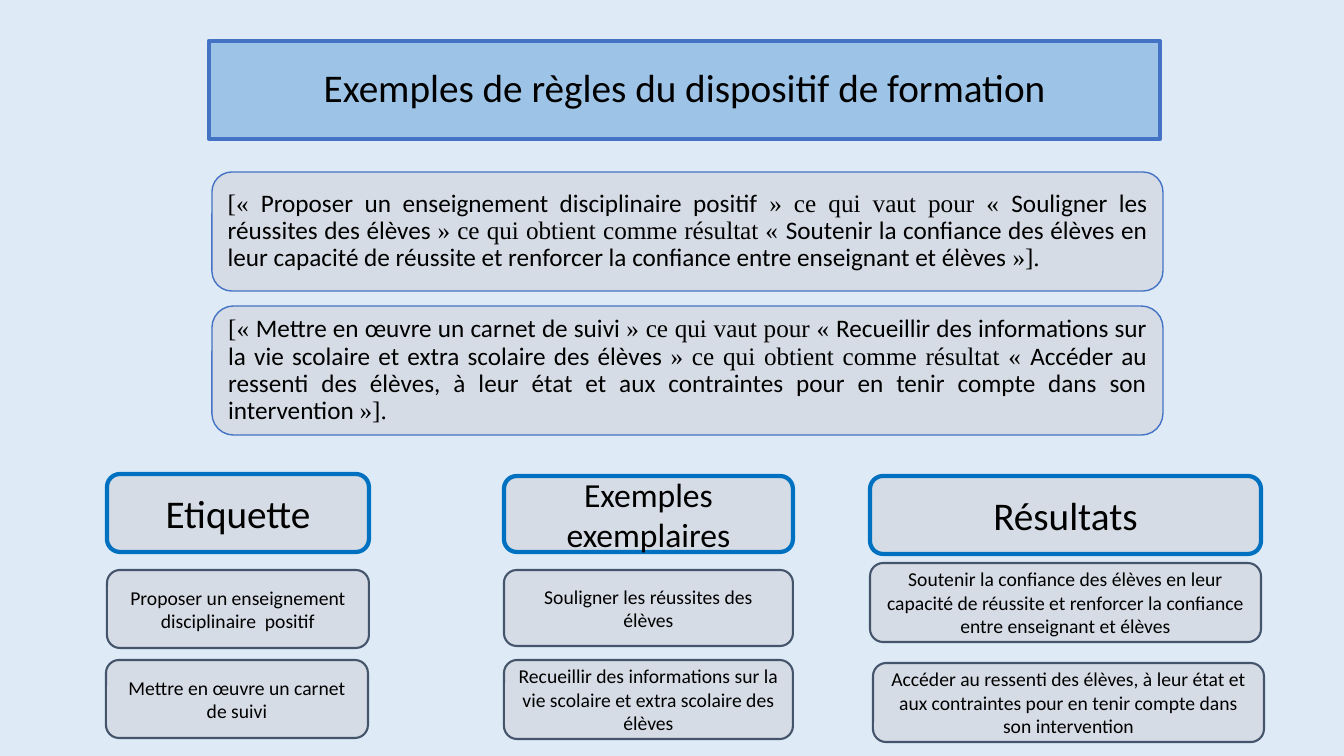
from pptx import Presentation
from pptx.dml.color import RGBColor
from pptx.enum.shapes import MSO_SHAPE
from pptx.enum.text import MSO_ANCHOR, PP_ALIGN
from pptx.util import Emu, Pt

RECT, ROUND = MSO_SHAPE.RECTANGLE, MSO_SHAPE.ROUNDED_RECTANGLE
MIDDLE = MSO_ANCHOR.MIDDLE
CENTER, JUSTIFY = PP_ALIGN.CENTER, PP_ALIGN.JUSTIFY

TITLE = "Exemples de règles du dispositif de formation"
HEADS = ["Etiquette", "Exemples exemplaires", "Résultats"]
ROWS = [
    ("Proposer un enseignement disciplinaire  positif",
     "Souligner les réussites des élèves",
     "Soutenir la confiance des élèves en leur capacité de réussite et "
     "renforcer la confiance entre enseignant et élèves"),
    ("Mettre en œuvre un carnet de suivi",
     "Recueillir des informations sur la vie scolaire et extra scolaire des élèves",
     "Accéder au ressenti des élèves, à leur état et aux contraintes "
     "pour en tenir compte dans son intervention"),
]
LINKS = ["[« ", "» ce qui vaut pour « ", "» ce qui obtient comme résultat « "]
END = "»]. "

TITLE_BOX = (209, 41, 951, 98)
RULE_BOXES = [(212, 172, 951, 119), (212, 306, 951, 129)]
HEAD_BOXES = [(107, 474, 262, 78), (504, 476, 289, 76), (870, 476, 391, 78)]
ROW_BOXES = [
    [(107, 570, 262, 78), (504, 570, 289, 76), (870, 563, 391, 79)],
    [(106, 660, 262, 78), (504, 660, 289, 79), (873, 663, 391, 79)],
]

THEME = {
    "back": "DEEBF7", "text": "000000", "sans": "Calibri", "serif": "Times New Roman",
    "title": {"form": RECT, "fill": "9DC3E6", "line": "4472C4", "width": 3,
              "size": 28, "para": {"alignment": CENTER, "line_spacing": 0.9}},
    "rule": {"form": ROUND, "fill": "D6DCE5", "line": "4472C4", "width": 1,
             "size": 18, "para": {"alignment": JUSTIFY, "line_spacing": 0.9}},
    "head": {"form": ROUND, "fill": "D6DCE5", "line": "0070C0", "width": 3,
             "size": 28, "para": {"alignment": CENTER}},
    "item": {"form": ROUND, "fill": "D6DCE5", "line": "44546A", "width": 1.5,
             "size": 14, "para": {"alignment": CENTER}},
}
THEME["long"] = {**THEME["head"], "size": 24}
SCALE = 914400 / 100.8


def px(count):
    return Emu(round(count * SCALE))


def color(code):
    return RGBColor.from_string(code)


def assign(target, values):
    for name, value in values.items():
        setattr(target, name, value)


def add_box(slide, place, runs, style):
    shape = slide.shapes.add_shape(style["form"], *map(px, place))
    shape.shadow.inherit = False
    shape.fill.solid()
    shape.fill.fore_color.rgb = color(style["fill"])
    shape.line.color.rgb = color(style["line"])
    shape.line.width = Pt(style["width"])
    frame = shape.text_frame
    assign(frame, {"word_wrap": True, "vertical_anchor": MIDDLE})
    para = frame.paragraphs[0]
    assign(para, style["para"])
    for text, face in runs:
        run = para.add_run()
        run.text = text
        assign(run.font, {"name": THEME[face], "size": Pt(style["size"])})
        run.font.color.rgb = color(THEME["text"])


def rule_runs(row):
    runs = []
    for link, part in zip(LINKS, row):
        runs += [(link, "serif"), (" ".join(part.split()) + " ", "sans")]
    return runs + [(END, "serif")]


def main():
    deck = Presentation()
    assign(deck, {"slide_width": px(1344), "slide_height": px(756)})
    slide = deck.slides.add_slide(deck.slide_layouts[6])
    slide.background.fill.solid()
    slide.background.fill.fore_color.rgb = color(THEME["back"])

    add_box(slide, TITLE_BOX, [(TITLE, "sans")], THEME["title"])
    for place, row in zip(RULE_BOXES, ROWS):
        add_box(slide, place, rule_runs(row), THEME["rule"])
    for place, text in zip(HEAD_BOXES, HEADS):
        style = THEME["long" if " " in text else "head"]
        add_box(slide, place, [(text, "sans")], style)
    for places, row in zip(ROW_BOXES, ROWS):
        for place, text in zip(places, row):
            add_box(slide, place, [(text, "sans")], THEME["item"])
    deck.save("out.pptx")


if __name__ == "__main__":
    main()
